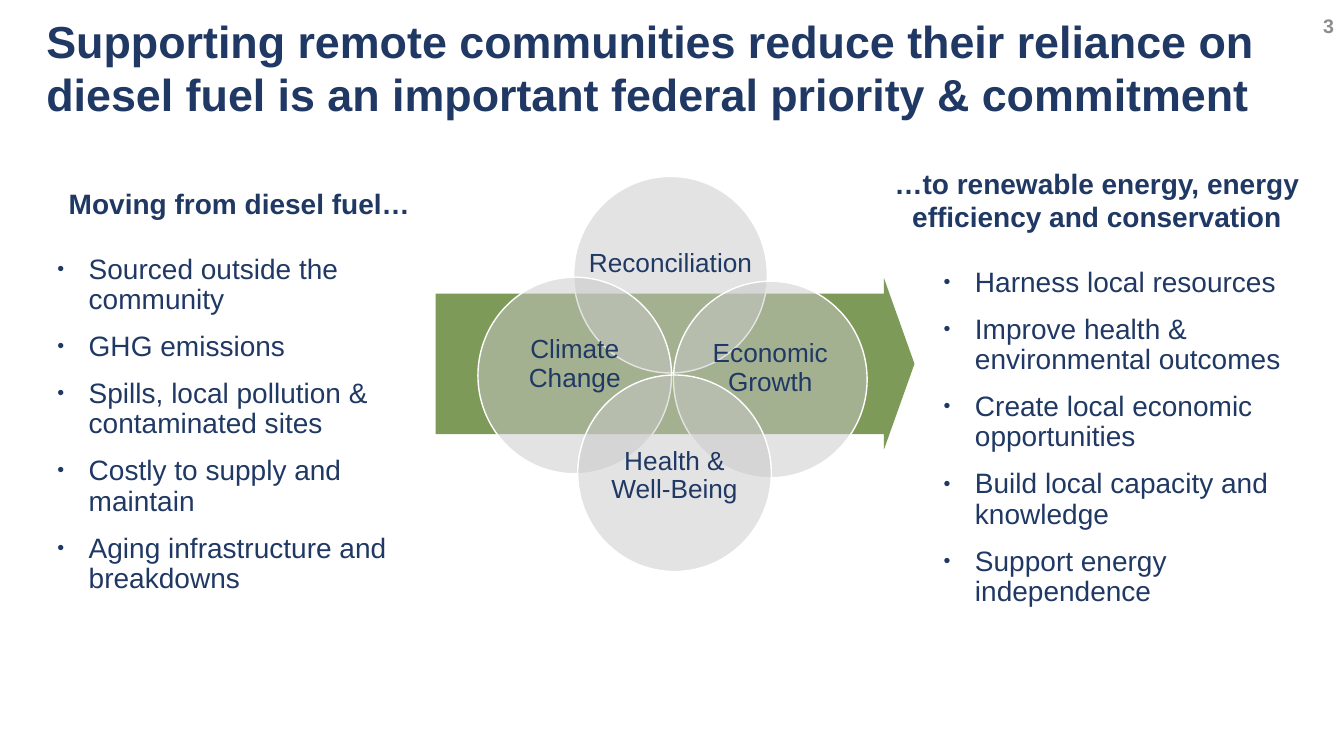
from lxml.etree import SubElement
from pptx import Presentation
from pptx.dml.color import RGBColor
from pptx.enum.shapes import MSO_SHAPE
from pptx.enum.text import MSO_ANCHOR, MSO_AUTO_SIZE, PP_ALIGN
from pptx.oxml.ns import qn
from pptx.util import Inches, Pt

NAVY = RGBColor(0x20, 0x38, 0x64)
GREEN = RGBColor(0x7E, 0x9A, 0x58)
GREY = RGBColor(0xC9, 0xC9, 0xC9)
NUMBER_GREY = RGBColor(0x8C, 0x8C, 0x8C)
WHITE = RGBColor(0xFF, 0xFF, 0xFF)
WIDTH, HEIGHT = 13.33, 7.5


def add_bullet(p):
    """Give a paragraph a small navy bullet and a hanging indent."""
    pPr = p._p.get_or_add_pPr()
    pPr.set("marL", str(Inches(0.31)))
    pPr.set("indent", str(-Inches(0.31)))
    color = SubElement(pPr, qn("a:buClr"))
    SubElement(color, qn("a:srgbClr"), val=str(NAVY))
    SubElement(pPr, qn("a:buSzPct"), val="70000")
    SubElement(pPr, qn("a:buFont"), typeface="Arial")
    SubElement(pPr, qn("a:buChar"), char="•")


def write(sp, *lines, size=20, color=NAVY, bold=False, align=PP_ALIGN.LEFT,
          anchor=MSO_ANCHOR.TOP, spacing=1.0, gap=0, bullets=False,
          wrap=True, insets=(0.1, 0.05, 0.1, 0.05)):
    """Fill a shape with formatted paragraphs."""
    tf = sp.text_frame
    tf.auto_size = MSO_AUTO_SIZE.NONE
    tf.word_wrap = wrap
    tf.vertical_anchor = anchor
    tf.margin_left, tf.margin_top, tf.margin_right, tf.margin_bottom = map(Inches, insets)
    for i, line in enumerate(lines):
        p = tf.add_paragraph() if i else tf.paragraphs[0]
        p.text = line
        p.alignment = align
        p.line_spacing = spacing
        p.space_before = Pt(gap if i else 0)
        p.space_after = Pt(gap)
        if bullets:
            add_bullet(p)
        for r in p.runs:
            r.font.name = "Arial"
            r.font.size = Pt(size)
            r.font.bold = bold
            r.font.color.rgb = color


def place(sp, x, y, w, h):
    """Move and size a shape in inches."""
    sp.left, sp.top, sp.width, sp.height = map(Inches, (x, y, w, h))


def add_header(s, number, title, x, y, w, h):
    """Place the title in its box and the slide number in the top right corner."""
    place(s.shapes.title, x, y, w, h)
    write(s.shapes.title, title, size=32, bold=True, anchor=MSO_ANCHOR.MIDDLE,
          insets=(0.13, 0.07, 0.13, 0.07))
    sp = s.shapes.add_textbox(Inches(WIDTH - 0.49), 0, Inches(0.49), Inches(0.5))
    write(sp, number, size=14, color=NUMBER_GREY, bold=True,
          align=PP_ALIGN.RIGHT, anchor=MSO_ANCHOR.MIDDLE)


def add_column(head, body, heading, items, head_box, body_box):
    """Fill a heading placeholder and the list placeholder under it."""
    place(head, *head_box)
    write(head, heading, bold=True, align=PP_ALIGN.CENTER)
    place(body, *body_box)
    write(body, *items, spacing=0.9, gap=6, bullets=True)


def add_shape(s, kind, fill, x, y, w, h):
    """Add a flat preset shape without an outline."""
    sp = s.shapes.add_shape(kind, *map(Inches, (x, y, w, h)))
    sp.shadow.inherit = False
    sp.fill.solid()
    sp.fill.fore_color.rgb = fill
    sp.line.fill.background()
    return sp


def add_diagram(s, x, y, w, h):
    """Draw the arrow and the four overlapping goals inside a box."""
    arrow = add_shape(s, MSO_SHAPE.RIGHT_ARROW, GREEN, x, y + 1.01, w, 1.7)
    arrow.adjustments[0], arrow.adjustments[1] = 0.82, 0.178
    goals = [("Reconciliation", 1.37, 0, 0, 0.22),
             ("Climate\vChange", 0.42, 1, 0, 0.22),
             ("Economic\vGrowth", 2.36, 1.04, 0, 0.22),
             ("Health &\vWell-Being", 1.41, 1.97, 0.06, 0)]
    for label, dx, dy, top, bottom in goals:
        sp = add_shape(s, MSO_SHAPE.OVAL, GREY, x + dx, y + dy, 1.92, h / 2)
        color = sp.fill._xPr.find(qn("a:solidFill"))[0]
        SubElement(color, qn("a:alpha"), val="50000")
        sp.line.color.rgb = WHITE
        sp.line.width = Pt(1)
        write(sp, label, size=18.7, align=PP_ALIGN.CENTER, spacing=0.9,
              anchor=MSO_ANCHOR.MIDDLE, wrap=False, insets=(0, top, 0, bottom))


def main():
    """Build and save the slide."""
    prs = Presentation()
    prs.slide_width, prs.slide_height = Inches(WIDTH), Inches(HEIGHT)
    s = prs.slides.add_slide(prs.slide_layouts.get_by_name("Comparison"))
    ph = s.placeholders
    add_header(s, "3", "Supporting remote communities reduce their reliance on diesel "
               "fuel is an important federal priority & commitment",
               0.33, 0.04, 12.74, 1.25)
    add_column(ph[1], ph[2], "Moving from diesel fuel…",
               ["Sourced outside the community",
                "GHG emissions",
                "Spills, local pollution & contaminated sites",
                "Costly to supply and maintain",
                "Aging infrastructure and breakdowns"],
               (0.38, 1.8, 3.99, 0.41), (0.47, 2.48, 3.53, 3.5))
    add_column(ph[3], ph[4], "…to renewable energy, energy efficiency and conservation",
               ["Harness local resources",
                "Improve health & environmental outcomes",
                "Create local economic opportunities",
                "Build local capacity and knowledge",
                "Support energy independence"],
               (8.69, 1.6, 4.38, 0.73), (9.26, 2.61, 3.82, 3.5))
    add_diagram(s, 4.32, 1.75, 4.75, 3.9)
    prs.save("out.pptx")


if __name__ == "__main__":
    main()
